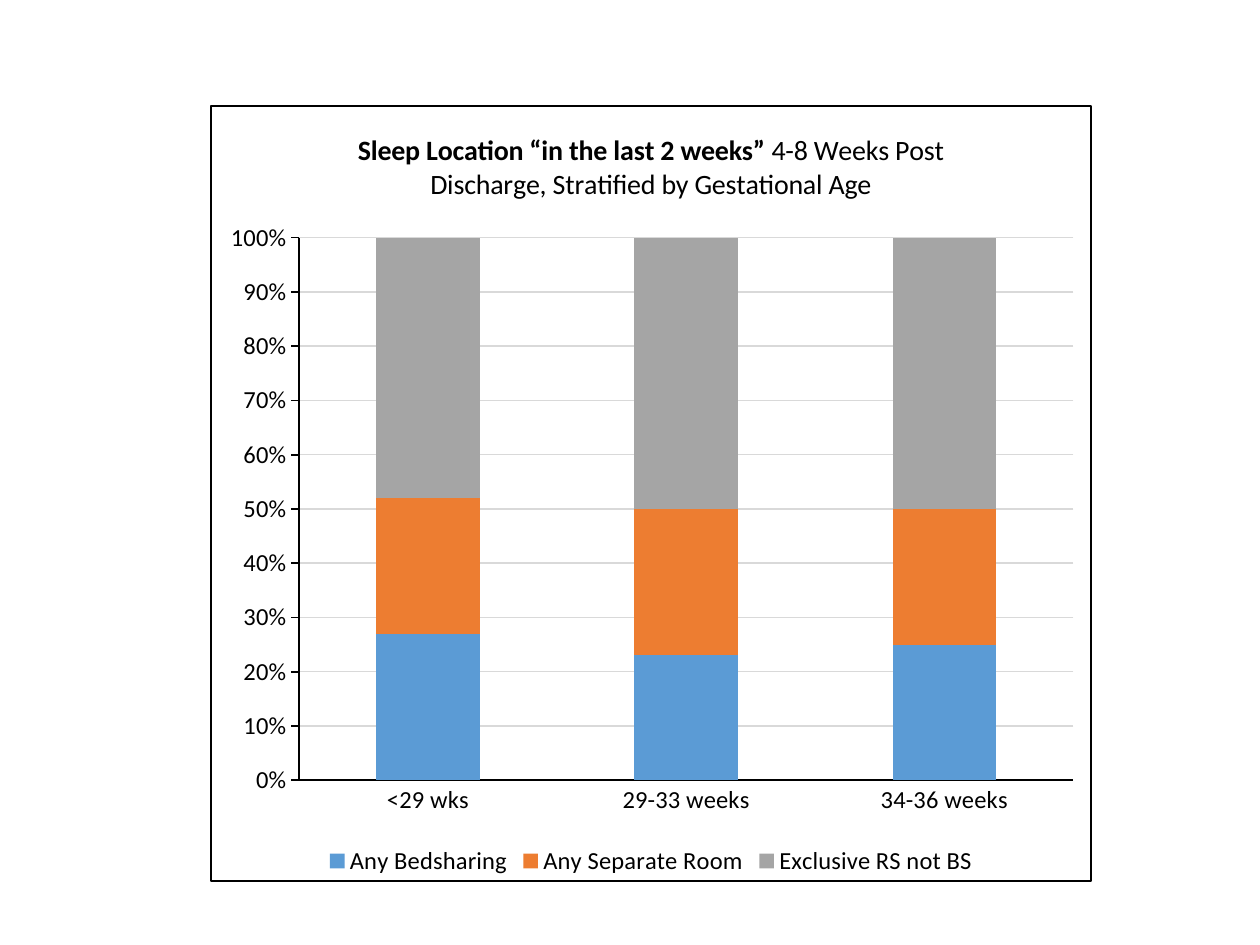
from dataclasses import dataclass
from typing import Any

from lxml import etree
from pptx import Presentation
from pptx import util as u
from pptx.chart import data as chart_data
from pptx.dml import color
from pptx.enum import chart as chart_enum
from pptx.oxml import ns


@dataclass(frozen=True)
class Theme:
    font: str = "Calibri"
    ink: str = "000000"
    grid: str = "D9D9D9"
    paper: str = "FFFFFF"
    series: tuple = ("5B9BD5", "ED7D31", "A5A5A5")
    title_size: int = 16
    label_size: int = 14
    line_width: float = 1
    grid_width: float = 0.75


def chart_element(parent, tag, **attributes):
    return etree.SubElement(parent, ns.qn(tag), **attributes)


@dataclass
class SlideBuilder:
    theme: Theme
    slide: Any

    def style_font(self, font, size, bold=False):
        font.name = self.theme.font
        font.size = u.Pt(size)
        font.bold = bold
        font.color.rgb = color.RGBColor.from_string(self.theme.ink)

    def style_line(self, line, line_color, width):
        line.color.rgb = color.RGBColor.from_string(line_color)
        line.width = u.Pt(width)

    def add_stacked_chart(self, box, categories, series, plot_box):
        data = chart_data.CategoryChartData(number_format="0%")
        data.categories = categories
        for name, values in series:
            data.add_series(name, values)
        frame = self.slide.shapes.add_chart(
            chart_enum.XL_CHART_TYPE.COLUMN_STACKED, *map(u.Pt, box), data)
        chart = frame.chart
        self.style_font(chart.font, self.theme.label_size)
        plot = chart.plots[0]
        plot.gap_width = 150
        plot.overlap = 100
        plot.vary_by_categories = False
        for item, fill_color in zip(plot.series, self.theme.series):
            item.format.fill.solid()
            item.format.fill.fore_color.rgb = color.RGBColor.from_string(fill_color)
        self.style_axes(chart)
        self.add_legend(chart)
        self.place_plot(chart, plot_box)
        self.add_border(chart)
        return chart

    def style_axes(self, chart):
        ticks = chart_enum.XL_TICK_MARK
        for axis, tick in ((chart.category_axis, ticks.NONE),
                           (chart.value_axis, ticks.OUTSIDE)):
            axis.major_tick_mark = tick
            axis.minor_tick_mark = ticks.NONE
            self.style_font(axis.tick_labels.font, self.theme.label_size)
            self.style_line(axis.format.line, self.theme.ink, self.theme.line_width)
        values = chart.value_axis
        values.minimum_scale, values.maximum_scale = 0, 1
        values.major_unit = 0.1
        values.tick_labels.number_format = "0%"
        values.tick_labels.number_format_is_linked = False
        values.has_major_gridlines = True
        self.style_line(values.major_gridlines.format.line,
                        self.theme.grid, self.theme.grid_width)

    def add_legend(self, chart):
        chart.has_legend = True
        chart.legend.position = chart_enum.XL_LEGEND_POSITION.BOTTOM
        chart.legend.include_in_layout = False
        self.style_font(chart.legend.font, self.theme.label_size)

    def add_title(self, chart, runs):
        chart.has_title = True
        chart.chart_title.include_in_layout = False
        paragraph = chart.chart_title.text_frame.paragraphs[0]
        for words, bold in runs:
            run = paragraph.add_run()
            run.text = words
            self.style_font(run.font, self.theme.title_size, bold)

    def place_plot(self, chart, plot_box):
        plot_area = chart.element.find(".//" + ns.qn("c:plotArea"))
        for old_layout in plot_area.findall(ns.qn("c:layout")):
            plot_area.remove(old_layout)
        layout = etree.Element(ns.qn("c:layout"))
        plot_area.insert(0, layout)
        manual = chart_element(layout, "c:manualLayout")
        chart_element(manual, "c:layoutTarget", val="inner")
        for tag in ("c:xMode", "c:yMode"):
            chart_element(manual, tag, val="edge")
        for tag, value in zip(("c:x", "c:y", "c:w", "c:h"), plot_box):
            chart_element(manual, tag, val=str(value))

    def add_border(self, chart):
        properties = etree.Element(ns.qn("c:spPr"))
        fill = chart_element(properties, "a:solidFill")
        chart_element(fill, "a:srgbClr", val=self.theme.paper)
        line = chart_element(properties, "a:ln", w=str(u.Pt(self.theme.line_width)))
        fill = chart_element(line, "a:solidFill")
        chart_element(fill, "a:srgbClr", val=self.theme.ink)
        chart.element.find(ns.qn("c:chart")).addnext(properties)


def main():
    presentation = Presentation()
    presentation.slide_width = u.Pt(720)
    presentation.slide_height = u.Pt(540)
    slide = presentation.slides.add_slide(presentation.slide_layouts[6])
    builder = SlideBuilder(Theme(), slide)
    chart = builder.add_stacked_chart(
        box=(120, 60, 504, 444),
        categories=("<29 wks", "29-33 weeks", "34-36 weeks"),
        series=(
            ("Any Bedsharing", (0.27, 0.23, 0.25)),
            ("Any Separate Room", (0.25, 0.27, 0.25)),
            ("Exclusive RS not BS", (0.49, 0.5, 0.51)),
        ),
        plot_box=(0.1, 0.17, 0.88, 0.7),
    )
    builder.add_title(chart, (
        ("Sleep Location “in the last 2 weeks” ", True),
        ("4-8 Weeks Post Discharge, Stratified by Gestational Age", False),
    ))
    presentation.save("out.pptx")


if __name__ == "__main__":
    main()
